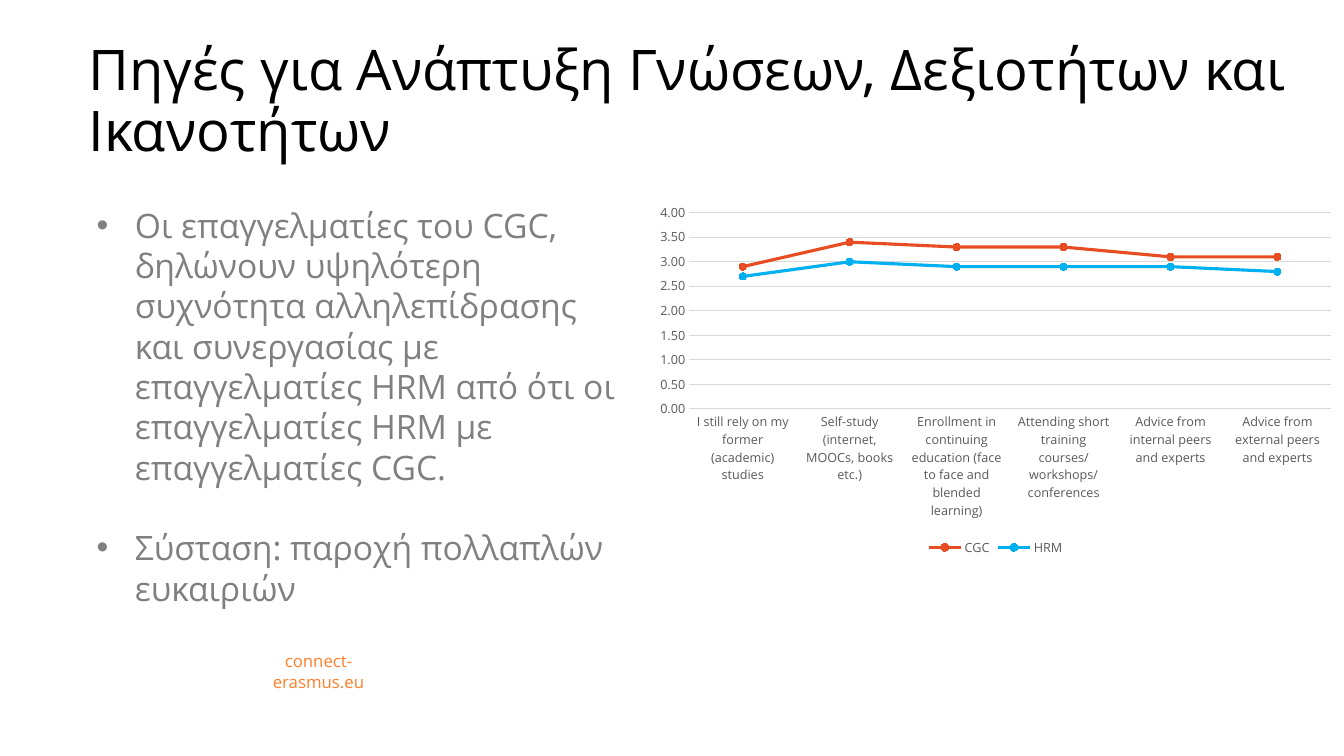
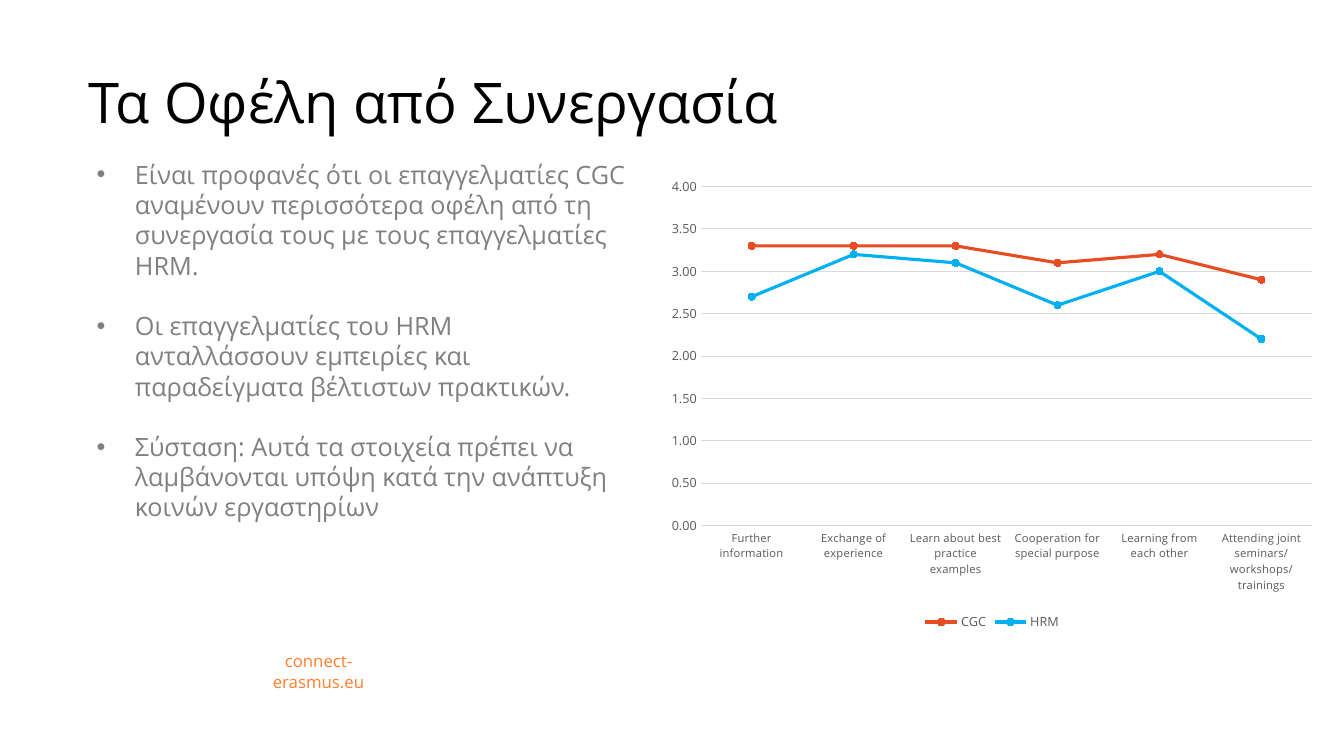
from lxml.etree import SubElement
from pptx import Presentation
from pptx.chart.data import CategoryChartData
from pptx.dml.color import RGBColor
from pptx.enum.chart import XL_CHART_TYPE, XL_LEGEND_POSITION, XL_MARKER_STYLE, XL_TICK_MARK
from pptx.enum.text import MSO_ANCHOR, PP_ALIGN
from pptx.oxml.ns import qn
from pptx.util import Inches, Pt

THEME = {
    "font": "Open Sans",
    "title": {"size": 40, "color": "000000"},
    "body": {"color": "808080"},
    "footer": {"size": 12, "color": "FF7F2A"},
    "chart": {"size": 9, "color": "595959"},
    "grid": "D9D9D9",
    "series": {"CGC": "E84C22", "HRM": "00B0F0"},
}

SLIDES = [
    {
        "title": "Πηγές για Ανάπτυξη Γνώσεων, Δεξιοτήτων και Ικανοτήτων",
        "title_place": (0.78, 0.07, 12.35, 1.6),
        "bullets": [
            "Οι επαγγελματίες του CGC, δηλώνουν υψηλότερη συχνότητα αλληλεπίδρασης και "
            "συνεργασίας με επαγγελματίες HRM από ότι οι επαγγελματίες HRM με επαγγελματίες CGC.",
            "Σύσταση: παροχή πολλαπλών ευκαιριών",
        ],
        "body_place": (0.86, 1.98, 5.48, 4.45),
        "body_size": 24,
        "chart_place": (6.41, 1.95, 6.93, 3.61),
        "category_size": 9,
        "categories": [
            "I still rely on my former (academic) studies",
            "Self-study (internet, MOOCs, books etc.)",
            "Enrollment in continuing education (face to face and blended learning)",
            "Attending short training courses/workshops/conferences",
            "Advice from internal peers and experts",
            "Advice from external peers and experts",
        ],
        "values": {"CGC": [2.9, 3.4, 3.3, 3.3, 3.1, 3.1], "HRM": [2.7, 3, 2.9, 2.9, 2.9, 2.8]},
    },
    {
        "title": "Τα Οφέλη από Συνεργασία",
        "title_place": (0.78, -0.21, 11.69, 1.6),
        "bullets": [
            "Είναι προφανές ότι οι επαγγελματίες CGC αναμένουν περισσότερα οφέλη από τη "
            "συνεργασία τους με τους επαγγελματίες HRM.",
            "Οι επαγγελματίες του HRM ανταλλάσσουν εμπειρίες και παραδείγματα βέλτιστων πρακτικών.",
            "Σύσταση: Αυτά τα στοιχεία πρέπει να λαμβάνονται υπόψη κατά την ανάπτυξη κοινών εργαστηρίων",
        ],
        "body_place": (0.86, 1.53, 5.48, 4.84),
        "body_size": 18,
        "chart_place": (6.53, 1.67, 6.62, 4.63),
        "category_size": 8,
        "categories": [
            "Further information",
            "Exchange of experience",
            "Learn about best practice examples",
            "Cooperation for special purpose",
            "Learning from each other",
            "Attending joint seminars/workshops/trainings",
        ],
        "values": {"CGC": [3.3, 3.3, 3.3, 3.1, 3.2, 2.9], "HRM": [2.7, 3.2, 3.1, 2.6, 3, 2.2]},
    },
]


def style_font(font, size, color):
    for name, value in {"name": THEME["font"], "size": Pt(size), "bold": False}.items():
        setattr(font, name, value)
    font.color.rgb = RGBColor.from_string(color)


def add_text(page, place, texts, style, anchor, paragraph_format, bulleted=False):
    frame = page.shapes.add_textbox(*map(Inches, place)).text_frame
    for name, value in {"word_wrap": True, "vertical_anchor": anchor}.items():
        setattr(frame, name, value)
    for index, text in enumerate(texts):
        paragraph = frame.add_paragraph() if index else frame.paragraphs[0]
        for name, value in paragraph_format.items():
            setattr(paragraph, name, value)
        if index:
            paragraph.space_before = Pt(style["size"] * 1.2)
        if bulleted:
            properties = paragraph._p.get_or_add_pPr()
            properties.set("marL", str(Inches(0.38)))
            properties.set("indent", str(Inches(-0.38)))
            SubElement(properties, qn("a:buFont"), typeface="Arial")
            SubElement(properties, qn("a:buChar"), char="•")
        span = paragraph.add_run()
        span.text = text
        style_font(span.font, **style)


deck = Presentation()
deck.slide_width, deck.slide_height = Inches(13.33), Inches(7.5)

for content in SLIDES:
    page = deck.slides.add_slide(deck.slide_layouts[6])
    add_text(page, content["title_place"], [content["title"]], THEME["title"],
             MSO_ANCHOR.BOTTOM, {"line_spacing": 0.9})
    add_text(page, content["body_place"], content["bullets"],
             {"size": content["body_size"], **THEME["body"]},
             MSO_ANCHOR.TOP, {"alignment": PP_ALIGN.LEFT}, bulleted=True)
    add_text(page, (2.28, 6.51, 1.76, 0.3), ["connect-erasmus.eu"], THEME["footer"],
             MSO_ANCHOR.MIDDLE, {"alignment": PP_ALIGN.CENTER})

    data = CategoryChartData(number_format="0.0")
    data.categories = content["categories"]
    for name, values in content["values"].items():
        data.add_series(name, values)
    chart = page.shapes.add_chart(
        XL_CHART_TYPE.LINE_MARKERS, *map(Inches, content["chart_place"]), data).chart
    chart.has_title = False
    chart.has_legend = True
    style_font(chart.font, **THEME["chart"])
    style_font(chart.legend.font, **THEME["chart"])
    for name, value in {"position": XL_LEGEND_POSITION.BOTTOM, "include_in_layout": False}.items():
        setattr(chart.legend, name, value)

    for axis, size in ((chart.category_axis, content["category_size"]),
                       (chart.value_axis, THEME["chart"]["size"])):
        axis.major_tick_mark = axis.minor_tick_mark = XL_TICK_MARK.NONE
        style_font(axis.tick_labels.font, size, THEME["chart"]["color"])
    scale = {"minimum_scale": 0, "maximum_scale": 4, "major_unit": 0.5, "has_major_gridlines": True}
    for name, value in scale.items():
        setattr(chart.value_axis, name, value)
    for name, value in {"number_format": "###0.00", "number_format_is_linked": False}.items():
        setattr(chart.value_axis.tick_labels, name, value)
    chart.value_axis.format.line.fill.background()
    for line in (chart.category_axis.format.line, chart.value_axis.major_gridlines.format.line):
        line.color.rgb = RGBColor.from_string(THEME["grid"])
        line.width = Pt(0.75)

    plot = chart.plots[0]
    plot.vary_by_categories = False
    for series in plot.series:
        color = RGBColor.from_string(THEME["series"][series.name])
        series.smooth = False
        series.format.line.color.rgb = color
        series.format.line.width = Pt(2.25)
        for name, value in {"style": XL_MARKER_STYLE.CIRCLE, "size": 5}.items():
            setattr(series.marker, name, value)
        series.marker.format.fill.solid()
        series.marker.format.fill.fore_color.rgb = color
        series.marker.format.line.color.rgb = color

deck.save("out.pptx")
